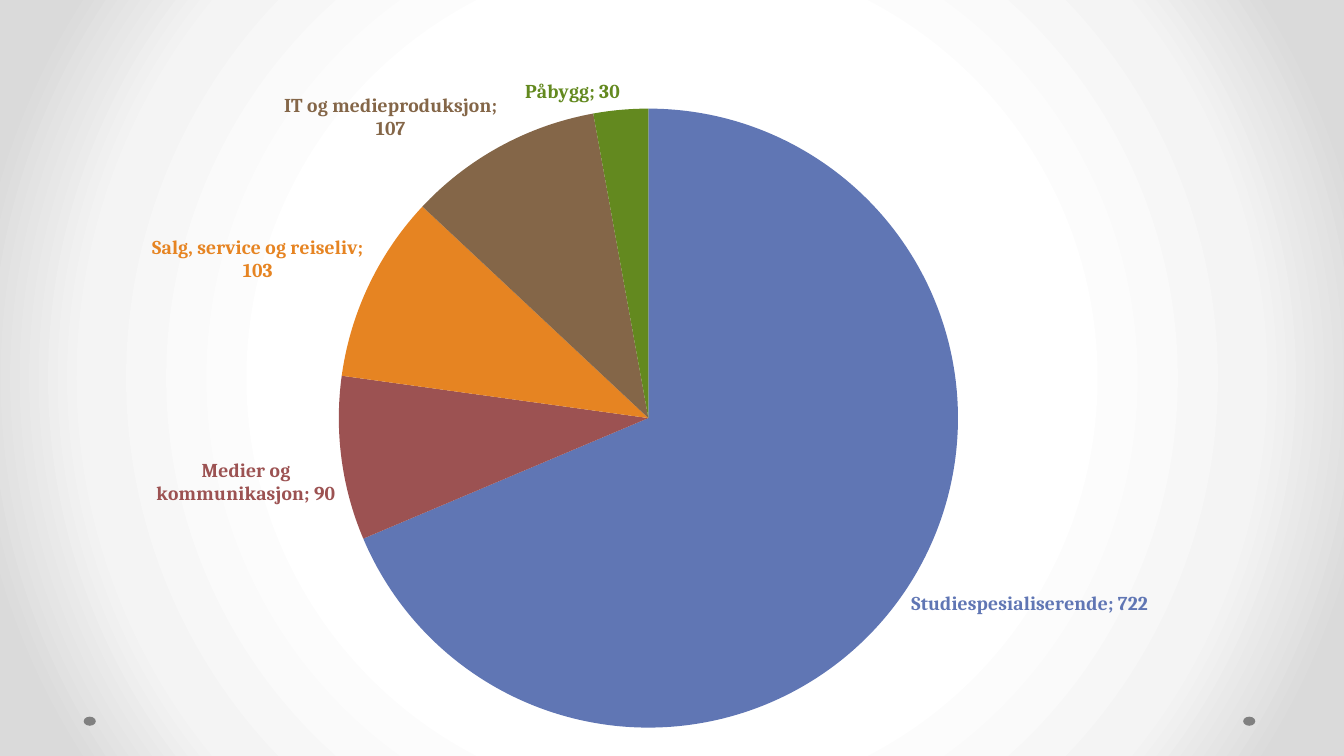
from lxml import etree
from pptx import Presentation
from pptx.chart.data import CategoryChartData as ChartData
from pptx.dml.color import RGBColor
from pptx.enum.chart import XL_CHART_TYPE as Kind, XL_LABEL_POSITION as Pos
from pptx.enum.shapes import MSO_SHAPE as Shape
from pptx.oxml import parse_xml
from pptx.oxml.ns import nsdecls, qn
from pptx.util import Inches, Pt

# Content: programme, pupils, colour
SLICES = [
    ("Studiespesialiserende", 722, "6076B4"),
    ("Medier og kommunikasjon", 90, "9C5252"),
    ("Salg, service og reiseliv", 103, "E68422"),
    ("IT og medieproduksjon", 107, "846648"),
    ("Påbygg", 30, "63891F"),
]
STOPS = [(50, "FFFFFF"), (76, "F4F4F4"), (92, "DADADA")]
DOTS = [0.83, 12.33]
FONT = "Cambria"
BOX = (0.29, 0.6, 11.81, 6.76)
PIE = {"x": 0.26, "y": 0.07, "w": 0.52, "h": 0.91}  # shares of the chart


def paint(fill, color):
    fill.solid()
    fill.fore_color.rgb = RGBColor.from_string(color)


prs = Presentation()
prs.slide_width, prs.slide_height = Inches(13.33), Inches(7.5)
slide = prs.slides.add_slide(prs.slide_layouts[6])

# Radial background
slide.background.fill.gradient()
grad = next(slide.element.iter(qn("a:gradFill")))
stops = "".join(
    f'<a:gs pos="{pos * 1000}"><a:srgbClr val="{color}"/></a:gs>'
    for pos, color in STOPS
)
grad.getparent().replace(grad, parse_xml(
    f'<a:gradFill {nsdecls("a")} rotWithShape="1"><a:gsLst>{stops}</a:gsLst>'
    '<a:path path="circle"><a:fillToRect l="50000" t="50000" r="50000" b="50000"/>'
    '</a:path></a:gradFill>'
))

# Corner dots
for left in DOTS:
    dot = slide.shapes.add_shape(
        Shape.OVAL, Inches(left), Inches(7.11), Inches(0.12), Inches(0.09))
    dot.shadow.inherit = False
    paint(dot.fill, "808080")
    dot.line.fill.background()

# Pie chart
data = ChartData()
data.categories = [name for name, _, _ in SLICES]
data.add_series("Series 1", [count for _, count, _ in SLICES])
chart = slide.shapes.add_chart(
    Kind.PIE, *[Inches(side) for side in BOX], data).chart
chart.has_title = chart.has_legend = False
chart.font.name, chart.font.size = FONT, Pt(10)
chart.font.color.rgb = RGBColor.from_string("000000")
plot = chart.plots[0]
plot.vary_by_categories = True

# Slices and their labels
for i, (_, _, color) in enumerate(SLICES):
    point = plot.series[0].points[i]
    paint(point.format.fill, color)
    point.format.line.fill.background()
    label = point.data_label
    font = label.font
    font.name, font.size, font.bold = FONT, Pt(14), True
    font.color.rgb = RGBColor.from_string(color)
    label.position = Pos.OUTSIDE_END

# Category name and value in each label
for node in chart.element.iter(qn("c:dLbl")):
    node.find(qn("c:showCatName")).set("val", "1")
    etree.SubElement(node, qn("c:separator")).text = "; "

# Fixed place of the pie
area = next(chart.element.iter(qn("c:plotArea")))
old = area.find(qn("c:layout"))
if old is not None:
    area.remove(old)
modes = "".join(f'<c:{axis}Mode val="edge"/>' for axis in "xy")
sizes = "".join(f'<c:{key} val="{part}"/>' for key, part in PIE.items())
area.insert(0, parse_xml(
    f'<c:layout {nsdecls("c")}><c:manualLayout><c:layoutTarget val="inner"/>'
    f'{modes}{sizes}</c:manualLayout></c:layout>'
))

prs.save("out.pptx")
